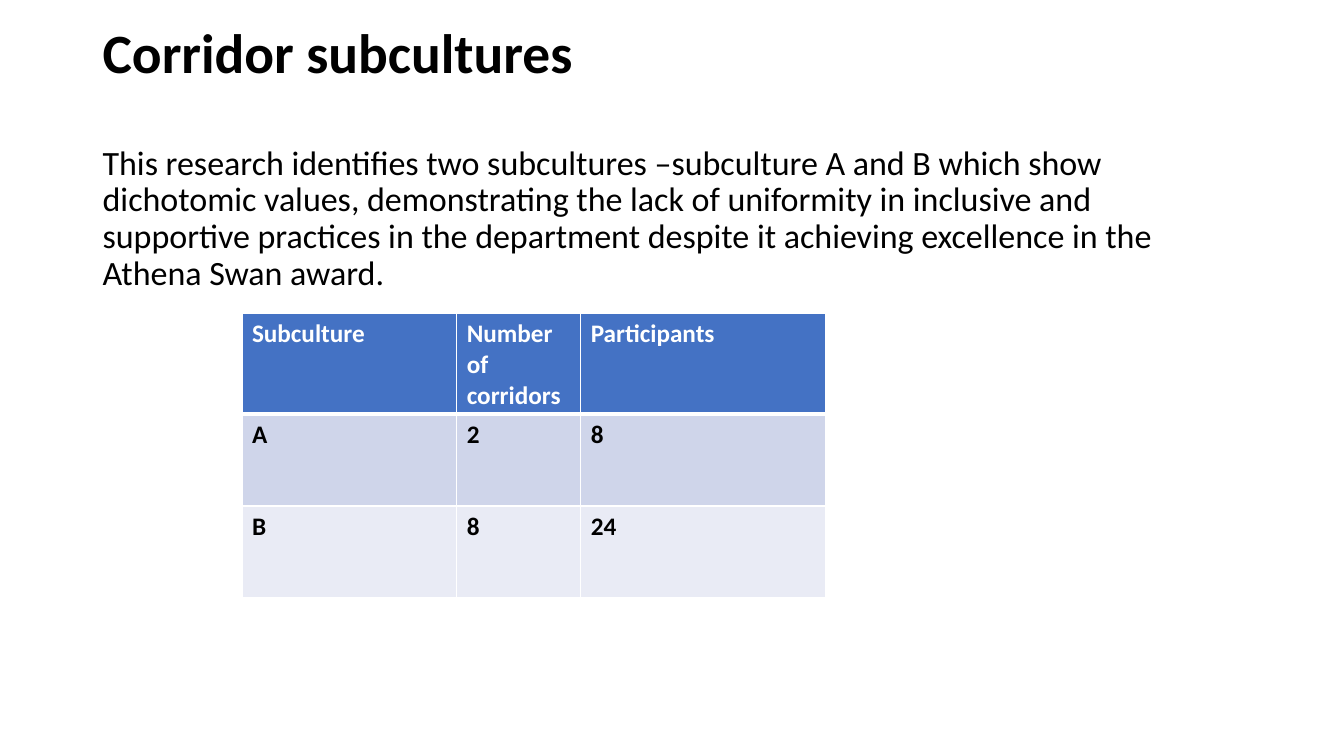
from lxml import etree
from pptx import Presentation
from pptx import util as u
from pptx.dml.color import RGBColor
from pptx.enum import text
from pptx.oxml import ns

BLACK = RGBColor(0x00, 0x00, 0x00)
WHITE = RGBColor(0xFF, 0xFF, 0xFF)
HEADER_BLUE = RGBColor(0x44, 0x72, 0xC4)
BAND_DARK = RGBColor(0xCF, 0xD5, 0xEA)
BAND_LIGHT = RGBColor(0xE9, 0xEB, 0xF5)


class SlideBuilder:
    font_name = "Calibri"
    table_size = 18

    def __init__(self, slide):
        self.slide = slide

    def add_run(self, paragraph, words, size, color=BLACK, bold=False):
        run = paragraph.add_run()
        run.text = words
        run.font.name = self.font_name
        run.font.size = u.Pt(size)
        run.font.bold = bold
        run.font.color.rgb = color

    def add_text(self, left, top, width, height, paragraphs, gap, bottom_inset):
        box = self.slide.shapes.add_textbox(
            u.Inches(left), u.Inches(top), u.Inches(width), u.Inches(height))
        frame = box.text_frame
        frame.word_wrap = True
        frame.vertical_anchor = text.MSO_ANCHOR.MIDDLE
        frame.margin_bottom = u.Inches(bottom_inset)
        for index, (words, size, bold) in enumerate(paragraphs):
            paragraph = frame.add_paragraph() if index else frame.paragraphs[0]
            paragraph.line_spacing = 0.9
            if index:
                paragraph.space_before = u.Pt(gap)
            self.add_run(paragraph, words, size, bold=bold)

    def add_border(self, cell, side, width):
        properties = cell._tc.get_or_add_tcPr()
        line = etree.SubElement(properties, ns.qn(f"a:ln{side}"), w=str(u.Pt(width)))
        fill = etree.SubElement(line, ns.qn("a:solidFill"))
        etree.SubElement(fill, ns.qn("a:srgbClr"), val=str(WHITE))

    def add_table(self, left, top, widths, heights, rows, fills):
        table = self.slide.shapes.add_table(
            len(rows), len(widths), u.Inches(left), u.Inches(top),
            u.Inches(sum(widths)), u.Inches(sum(heights))).table
        for column, width in zip(table.columns, widths):
            column.width = u.Inches(width)
        for row, height in zip(table.rows, heights):
            row.height = u.Inches(height)
        for r, values in enumerate(rows):
            for c, value in enumerate(values):
                cell = table.cell(r, c)
                for side in "LRTB":
                    under_header = (r, side) in ((0, "B"), (1, "T"))
                    self.add_border(cell, side, 3 if under_header else 1)
                cell.fill.solid()
                cell.fill.fore_color.rgb = fills[r]
                self.add_run(cell.text_frame.paragraphs[0], value, self.table_size,
                             BLACK if r else WHITE, bold=True)


def main():
    deck = Presentation()
    deck.slide_width = u.Inches(13.33)
    deck.slide_height = u.Inches(7.5)
    builder = SlideBuilder(deck.slides.add_slide(deck.slide_layouts[6]))

    finding = (
        "This research identifies two subcultures –subculture A and B which show "
        "dichotomic values, demonstrating the lack of uniformity in inclusive and "
        "supportive practices in the department despite it achieving excellence in "
        "the Athena Swan award."
    )
    builder.add_text(
        0.92, 0.4, 11.5, 2.69,
        [("Corridor subcultures", 39.6, True), (finding, 24.3, False)],
        gap=43, bottom_inset=0.38)

    subcultures = [
        ("Subculture", "Number of corridors", "Participants"),
        ("A", "2", "8"),
        ("B", "8", "24"),
    ]
    builder.add_table(
        2.4, 3.11, [2.13, 1.23, 2.43], [0.87, 0.91, 0.91],
        subcultures, [HEADER_BLUE, BAND_DARK, BAND_LIGHT])

    deck.save("out.pptx")


if __name__ == "__main__":
    main()
